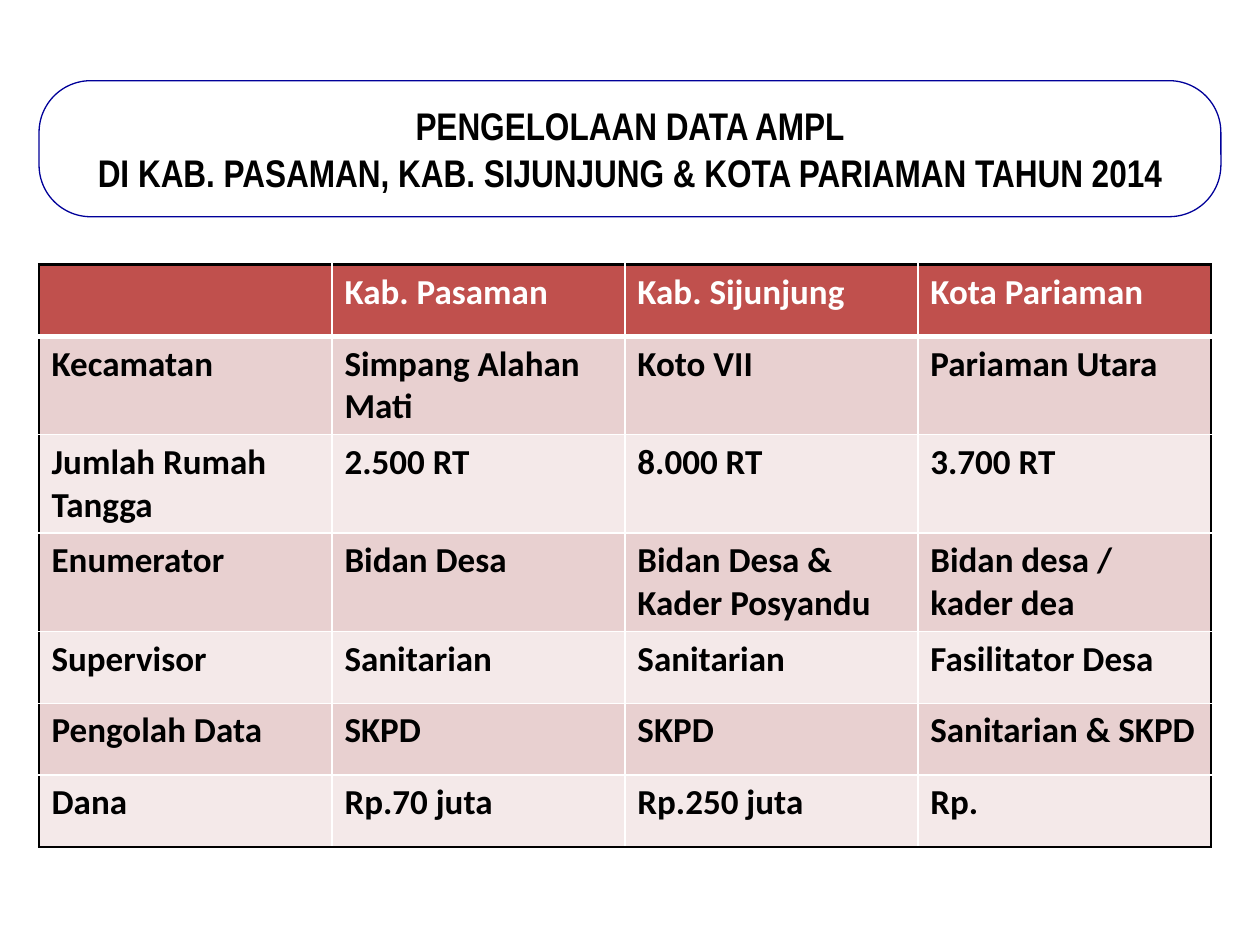
from lxml.etree import SubElement
from pptx import Presentation
from pptx.dml.color import RGBColor
from pptx.enum.shapes import MSO_SHAPE
from pptx.enum.text import MSO_ANCHOR, PP_ALIGN
from pptx.oxml.ns import qn
from pptx.util import Inches, Pt

BLACK = RGBColor(0x00, 0x00, 0x00)
WHITE = RGBColor(0xFF, 0xFF, 0xFF)
NAVY = RGBColor(0x00, 0x00, 0x99)
RED = RGBColor(0xC0, 0x50, 0x4D)
ROSE = RGBColor(0xE8, 0xD0, 0xD0)
PALE_ROSE = RGBColor(0xF4, 0xE9, 0xE9)

OUTER_EDGE = (BLACK, 1.5)
INNER_EDGE = (WHITE, 1)
HEADER_EDGE = (WHITE, 3)

TITLE_LINES = [
    "PENGELOLAAN DATA AMPL",
    "DI KAB. PASAMAN, KAB. SIJUNJUNG & KOTA PARIAMAN TAHUN 2014",
]
DISTRICT_ROWS = [
    ["", "Kab. Pasaman", "Kab. Sijunjung", "Kota Pariaman"],
    ["Kecamatan", "Simpang Alahan Mati", "Koto VII", "Pariaman Utara"],
    ["Jumlah Rumah Tangga", "2.500 RT", "8.000 RT", "3.700 RT"],
    ["Enumerator", "Bidan Desa", "Bidan Desa & Kader Posyandu", "Bidan desa / kader dea"],
    ["Supervisor", "Sanitarian", "Sanitarian", "Fasilitator Desa"],
    ["Pengolah Data", "SKPD", "SKPD", "Sanitarian & SKPD"],
    ["Dana", "Rp.70 juta", "Rp.250 juta", "Rp."],
]


class SlideBuilder:
    """Places elements in inches on a 10 by 7.5 slide with a shared left margin."""

    margin = 0.31
    title_font, title_size = "Arial Narrow", 22
    table_font, table_size = "Calibri", 20

    def __init__(self, presentation):
        self.slide = presentation.slides.add_slide(presentation.slide_layouts[6])
        self.width = presentation.slide_width / Inches(1)

    def add_run(self, paragraph, text, font, size, color):
        run = paragraph.add_run()
        run.text = text
        run.font.name = font
        run.font.size = Pt(size)
        run.font.bold = True
        run.font.color.rgb = color

    def title(self, lines, top, height):
        banner = self.slide.shapes.add_shape(
            MSO_SHAPE.ROUNDED_RECTANGLE, Inches(self.margin), Inches(top),
            Inches(self.width - 2 * self.margin), Inches(height))
        banner.adjustments[0] = 0.38
        banner.shadow.inherit = False
        banner.fill.solid()
        banner.fill.fore_color.rgb = WHITE
        banner.line.color.rgb = NAVY
        banner.line.width = Pt(0.75)
        frame = banner.text_frame
        frame.word_wrap = True
        frame.vertical_anchor = MSO_ANCHOR.MIDDLE
        for index, line in enumerate(lines):
            paragraph = frame.add_paragraph() if index else frame.paragraphs[0]
            paragraph.alignment = PP_ALIGN.CENTER
            self.add_run(paragraph, line, self.title_font, self.title_size, BLACK)

    def table(self, rows, top, column_width, row_height):
        row_count, column_count = len(rows), len(rows[0])
        table = self.slide.shapes.add_table(
            row_count, column_count, Inches(self.margin), Inches(top),
            Inches(column_width * column_count), Inches(row_height * row_count)).table
        for r, values in enumerate(rows):
            is_header, is_last = r == 0, r == row_count - 1
            fill = RED if is_header else ROSE if r % 2 else PALE_ROSE
            for c, value in enumerate(values):
                cell = table.cell(r, c)
                cell.fill.solid()
                cell.fill.fore_color.rgb = fill
                self.cell_borders(cell, {
                    "L": OUTER_EDGE if c == 0 else INNER_EDGE,
                    "R": OUTER_EDGE if c == column_count - 1 else INNER_EDGE,
                    "T": OUTER_EDGE if is_header else HEADER_EDGE if r == 1 else INNER_EDGE,
                    "B": HEADER_EDGE if is_header else OUTER_EDGE if is_last else INNER_EDGE,
                })
                paragraph = cell.text_frame.paragraphs[0]
                if value:
                    self.add_run(paragraph, value, self.table_font, self.table_size,
                                 WHITE if is_header else BLACK)
                else:
                    paragraph.font.size = Pt(self.table_size)

    def cell_borders(self, cell, edges):
        """Borders must come before the fill in the cell properties."""
        properties = cell._tc.get_or_add_tcPr()
        for position, (side, (color, width)) in enumerate(edges.items()):
            line = SubElement(properties, qn(f"a:ln{side}"), w=str(Pt(width)))
            solid = SubElement(line, qn("a:solidFill"))
            SubElement(solid, qn("a:srgbClr"), val=str(color))
            properties.insert(position, line)


def main():
    presentation = Presentation()
    presentation.slide_width = Inches(10)
    presentation.slide_height = Inches(7.5)
    builder = SlideBuilder(presentation)
    builder.table(DISTRICT_ROWS, top=2.1, column_width=2.325, row_height=0.57)
    builder.title(TITLE_LINES, top=0.64, height=1.08)
    presentation.save("out.pptx")


if __name__ == "__main__":
    main()
